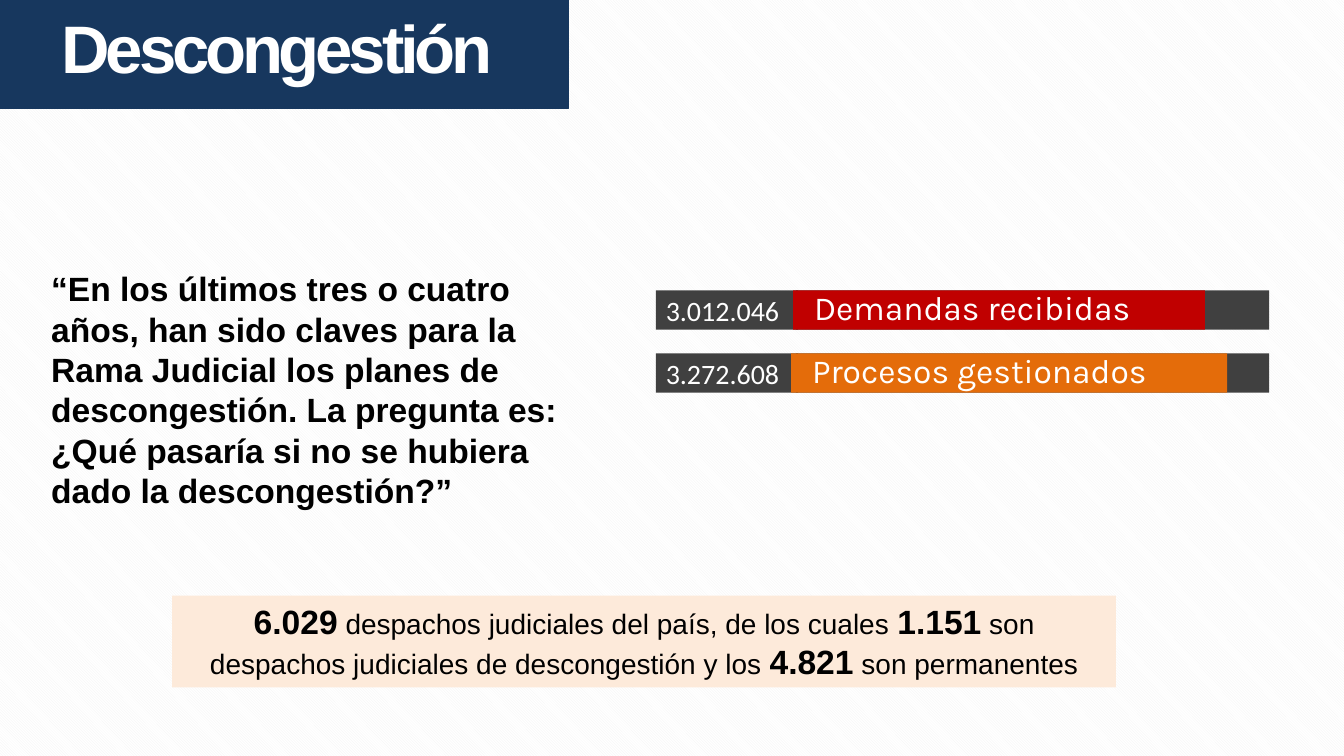
from pptx import Presentation
from pptx import util as u
from pptx.dml import color as c
from pptx.enum import dml, shapes, text

Pt = u.Pt
HUES = {"navy": "17375E", "gray": "404040", "red": "C00000", "gold": "E46C0A",
        "peach": "FDEADA", "white": "FFFFFF", "black": "000000", "stripe": "F2F2F2"}


class Deck:
    def __init__(self, wide, high):
        self.prs = Presentation()
        self.prs.slide_width, self.prs.slide_height = Pt(wide), Pt(high)
        self.slide = self.prs.slides.add_slide(self.prs.slide_layouts[6])

    def hue(self, name):
        return c.RGBColor.from_string(HUES[name])

    def ground(self, front, back):
        fill = self.slide.background.fill
        fill.patterned()
        fill.pattern = dml.MSO_PATTERN.LIGHT_DOWNWARD_DIAGONAL
        fill.fore_color.rgb = self.hue(front)
        fill.back_color.rgb = self.hue(back)

    def rect(self, at, fill):
        box = self.slide.shapes.add_shape(shapes.MSO_SHAPE.RECTANGLE, *map(Pt, at))
        box.shadow.inherit = False
        box.fill.solid()
        box.fill.fore_color.rgb = self.hue(fill)
        box.line.fill.background()
        return box

    def label(self, at):
        return self.slide.shapes.add_textbox(*map(Pt, at))

    def words(self, box, runs, hue, font="Arial", align="LEFT", anchor="TOP",
              pads=(7.2, 3.6, 7.2, 3.6), line=None, before=None, track=None):
        frame = box.text_frame
        frame.word_wrap = True
        frame.vertical_anchor = text.MSO_ANCHOR[anchor]
        (frame.margin_left, frame.margin_top,
         frame.margin_right, frame.margin_bottom) = map(Pt, pads)
        para = frame.paragraphs[0]
        para.alignment = text.PP_ALIGN[align]
        if line:
            para.line_spacing = line
        if before:
            para.space_before = Pt(before)
        for part, size, bold in runs:
            run = para.add_run()
            run.text = part
            run.font.name, run.font.size, run.font.bold = font, Pt(size), bold
            run.font.color.rgb = self.hue(hue)
            if track:
                run._r.get_or_add_rPr().set("spc", str(track * 100))


def main():
    deck = Deck(960.48, 540)
    deck.ground("stripe", "white")

    title = deck.rect((0, -0.5, 406, 78), "navy")
    title.line.color.rgb = deck.hue("navy")
    title.line.width = Pt(0.75)
    deck.words(title, [("Descongestión", 48, True)], "white", align="CENTER",
               pads=(9, 5, 19, 5), before=4.5, track=-3)

    bars = [("3.012.046", "Demandas recibidas", "red", 566.8, 294.4),
            ("3.272.608", "Procesos gestionados", "gold", 565.3, 311.6)]
    for row, (count, name, fill, left, wide) in enumerate(bars):
        top = 207.5 + 45 * row
        deck.rect((569, top, 338, 28), "gray")
        cell = deck.rect((468.7, top, 101.5, 28), "gray")
        deck.words(cell, [(count, 20, False)], "white", "Calibri", anchor="MIDDLE")
        bar = deck.rect((left, top, wide, 28), fill)
        deck.words(bar, [(name, 24, False)], "white", "Karla", anchor="MIDDLE",
                   pads=(15, 1.5, 12, 1.5), line=0.9)

    quote = deck.label((29.5, 188, 385, 181.5))
    deck.words(quote, [("“En los últimos tres o cuatro años, han sido claves para la "
                        "Rama Judicial los planes de descongestión. La pregunta es: "
                        "¿Qué pasaría si no se hubiera dado la descongestión?”",
                        24, True)], "black")

    note = deck.rect((123, 425.5, 674.6, 65.5), "peach")
    deck.words(note, [("6.029", 24, True),
                      (" despachos judiciales del país, de los cuales ", 20, False),
                      ("1.151", 24, True),
                      (" son despachos judiciales de descongestión y los ", 20, False),
                      ("4.821", 24, True),
                      (" son permanentes", 20, False)], "black", align="CENTER")

    deck.prs.save("out.pptx")


if __name__ == "__main__":
    main()
